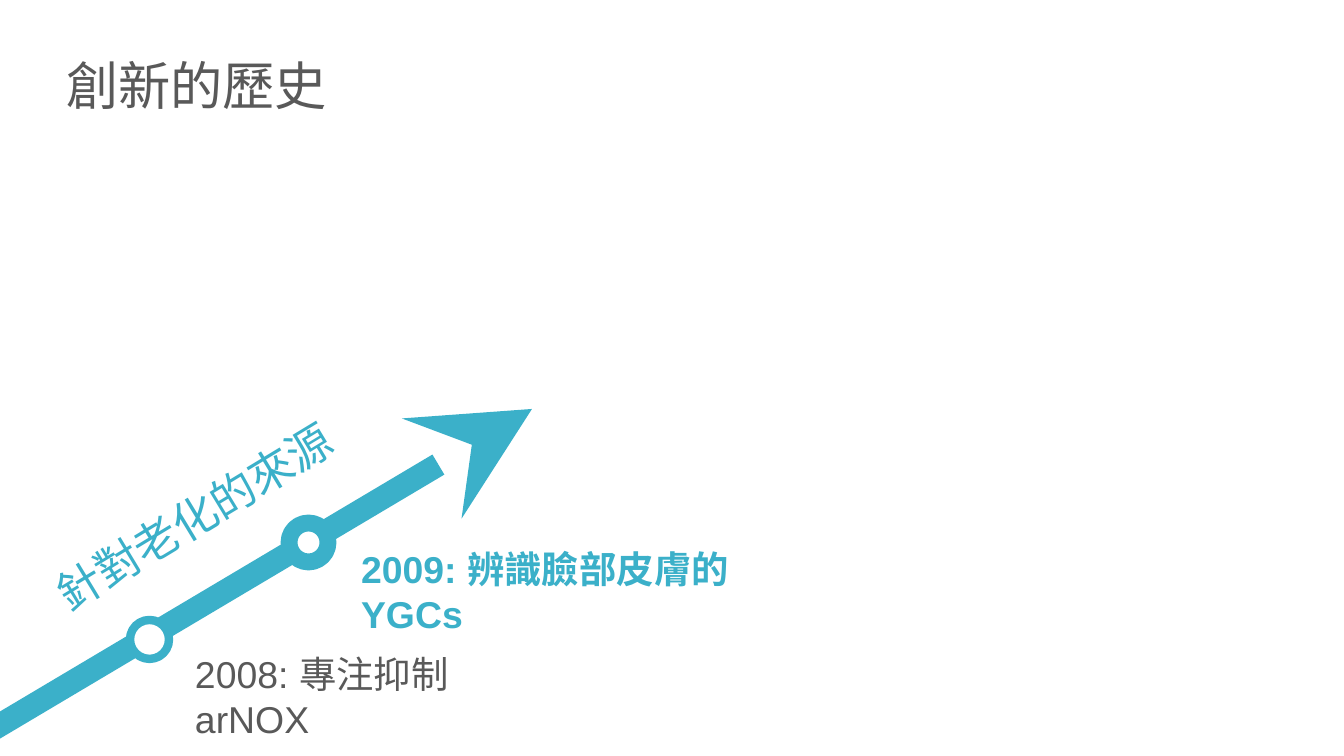
from dataclasses import dataclass

from lxml import etree
from pptx import Presentation
from pptx import util as u
from pptx.dml.color import RGBColor
from pptx.enum import shapes, text
from pptx.oxml.ns import qn

EMU_PER_PX = 914400 / 134.4


@dataclass(frozen=True)
class Theme:
    accent: RGBColor = RGBColor(0x3B, 0xB0, 0xC9)
    ink: RGBColor = RGBColor(0x59, 0x59, 0x59)
    paper: RGBColor = RGBColor(0xFF, 0xFF, 0xFF)
    font: str = "Arial"
    title: int = 28
    theme_line: int = 24
    event: int = 20


THEME = Theme()


def px(length):
    return u.Emu(round(length * EMU_PER_PX))


def place(shape, left, top, width, height):
    shape.left, shape.top = px(left), px(top)
    shape.width, shape.height = px(width), px(height)


def write(shape, words, size, color, bold=False, anchor=text.MSO_ANCHOR.TOP, right_inset=14):
    frame = shape.text_frame
    frame.word_wrap = True
    frame.auto_size = text.MSO_AUTO_SIZE.NONE
    frame.vertical_anchor = anchor
    frame.margin_left, frame.margin_right = px(14), px(right_inset)
    frame.margin_top = frame.margin_bottom = px(7)
    paragraph = frame.paragraphs[0]
    paragraph.alignment = text.PP_ALIGN.LEFT
    run = paragraph.add_run()
    run.text = words
    run.font.name = THEME.font
    run.font.size = u.Pt(size)
    run.font.bold = bold
    run.font.color.rgb = color


def add_title(slide, words):
    title = slide.shapes.title
    place(title, 52, 46, 785, 77)
    write(title, words, THEME.title, THEME.ink)


def add_label(slide, words, box, size, color, rotation=0, **style):
    label = slide.shapes.add_textbox(*map(px, box))
    label.rotation = rotation
    write(label, words, size, color, **style)


def add_timeline(slide, start, end):
    timeline = slide.shapes.add_connector(
        shapes.MSO_CONNECTOR.STRAIGHT, *map(px, (*start, *end)))
    timeline.line.color.rgb = THEME.accent
    timeline.line.width = u.Pt(12.5)
    outline = timeline.line._get_or_add_ln()
    etree.SubElement(outline, qn("a:tailEnd"), type="stealth", w="lg", len="lg")
    etree.SubElement(timeline._element.spPr, qn("a:effectLst"))


def add_milestone(slide, left, top, ring):
    diameter = 39
    milestone = slide.shapes.add_shape(
        shapes.MSO_SHAPE.OVAL, *map(px, (left, top, diameter, diameter)))
    milestone.shadow.inherit = False
    milestone.fill.solid()
    milestone.fill.fore_color.rgb = THEME.paper
    milestone.line.color.rgb = THEME.accent
    milestone.line.width = u.Pt(ring)


def main():
    deck = Presentation()
    deck.slide_width, deck.slide_height = px(1344), px(756)
    slide = deck.slides.add_slide(deck.slide_layouts[5])

    add_title(slide, "創新的歷史")
    add_label(slide, "2009: 辨識臉部皮膚的YGCs", (347, 539, 500, 59),
              THEME.event, THEME.accent, bold=True, right_inset=40)
    add_timeline(slide, (-15, 734), (532, 409))
    add_milestone(slide, 130, 620, ring=4.5)
    add_label(slide, "2008: 專注抑制 arNOX", (181, 644, 418, 59),
              THEME.event, THEME.ink, right_inset=40)
    add_milestone(slide, 289, 523, ring=9)
    add_label(slide, "針對老化的來源", (-46, 235, 1074, 130), THEME.theme_line,
              THEME.accent, rotation=328.8, anchor=text.MSO_ANCHOR.BOTTOM)

    deck.save("out.pptx")


if __name__ == "__main__":
    main()
